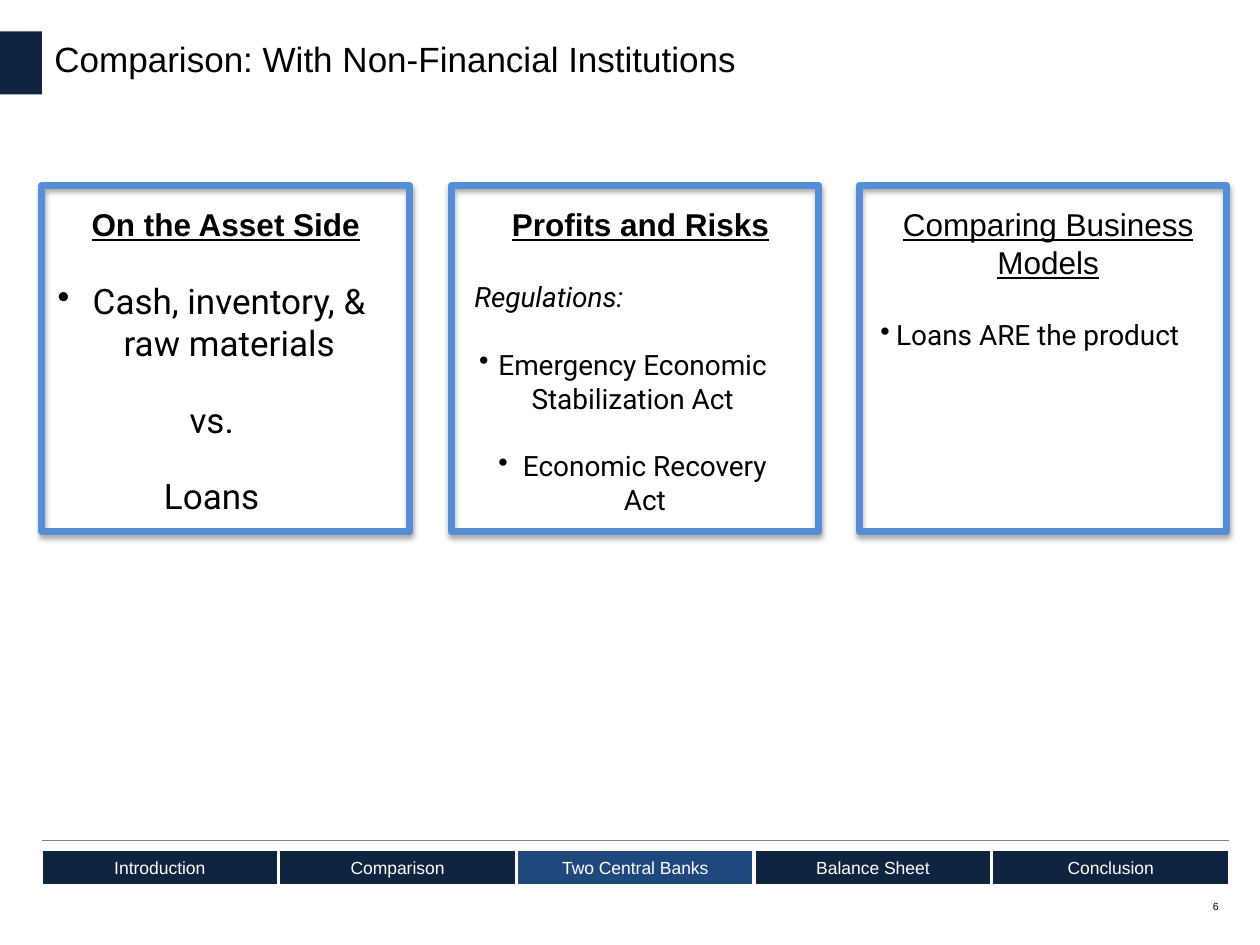
from dataclasses import dataclass

from lxml import etree
from pptx import Presentation
from pptx.dml.color import RGBColor
from pptx.enum.shapes import MSO_CONNECTOR, MSO_SHAPE
from pptx.enum.text import MSO_ANCHOR, PP_ALIGN
from pptx.oxml.ns import qn
from pptx.util import Pt

RECTANGLE = MSO_SHAPE.RECTANGLE
STRAIGHT = MSO_CONNECTOR.STRAIGHT
LEFT, CENTER = PP_ALIGN.LEFT, PP_ALIGN.CENTER
MIDDLE = MSO_ANCHOR.MIDDLE

COLORS = {
    "navy": "0F243E",
    "active": "1F497D",
    "frame": "558ED5",
    "rule": "808080",
    "black": "000000",
    "white": "FFFFFF",
}
MARGIN = 24
CONTENT_RIGHT = 702


@dataclass
class Line:
    text: str
    size: float
    font: str = "Roboto"
    align: PP_ALIGN = LEFT
    before: float = 0
    hang: float = 0  # bullet indent, 0 for no bullet
    right: float = 0
    bold: bool = False
    italic: bool = False
    underline: bool = False
    color: str = "black"


@dataclass
class Panel:
    frame_left: float
    text_left: float
    text_width: float
    lines: list[Line]


def rgb(name: str) -> RGBColor:
    return RGBColor.from_string(COLORS[name])


def write(frame, lines: list[Line]) -> None:
    frame.word_wrap = True
    for i, line in enumerate(lines):
        paragraph = frame.paragraphs[0] if i == 0 else frame.add_paragraph()
        paragraph.text = line.text
        paragraph.alignment = line.align
        paragraph.space_before = Pt(line.before)
        font = paragraph.font
        font.name, font.size = line.font, Pt(line.size)
        font.bold, font.italic, font.underline = line.bold, line.italic, line.underline
        font.color.rgb = rgb(line.color)
        if line.hang:
            add_bullet(paragraph, line)


def add_bullet(paragraph, line: Line) -> None:
    props = paragraph._p.get_or_add_pPr()
    props.set("marL", str(Pt(line.hang)))
    props.set("indent", str(-Pt(line.hang)))
    props.set("marR", str(Pt(line.right)))
    bullet = etree.Element(qn("a:buChar"), char="•")
    props.find(qn("a:defRPr")).addprevious(bullet)


def add_text(slide, left: float, top: float, width: float, height: float,
             lines: list[Line]) -> None:
    box = slide.shapes.add_textbox(Pt(left), Pt(top), Pt(width), Pt(height))
    write(box.text_frame, lines)


def add_block(slide, left: float, top: float, width: float, height: float,
              fill: str | None = None, line: str | None = None, weight: float = 0):
    block = slide.shapes.add_shape(RECTANGLE, Pt(left), Pt(top), Pt(width), Pt(height))
    block.shadow.inherit = False
    if fill:
        block.fill.solid()
        block.fill.fore_color.rgb = rgb(fill)
    else:
        block.fill.background()
    if line:
        block.line.color.rgb = rgb(line)
        block.line.width = Pt(weight)
    else:
        block.line.fill.background()
    return block


def add_frame(slide, left: float) -> None:
    frame = add_block(slide, left, 106, 210, 198, line="frame", weight=4)
    etree.SubElement(frame.line._get_or_add_ln(), qn("a:round"))
    effects = frame._element.spPr.find(qn("a:effectLst"))
    shadow = etree.SubElement(effects, qn("a:outerShdw"), blurRad=str(Pt(3.1)),
                              dist=str(Pt(1.8)), dir="5400000", rotWithShape="0")
    shade = etree.SubElement(shadow, qn("a:srgbClr"), val=COLORS["black"])
    etree.SubElement(shade, qn("a:alpha"), val="35000")


def heading(text: str, bold: bool = True) -> Line:
    return Line(text, 18, "Arial", CENTER, bold=bold, underline=True)


PANELS = [
    Panel(24, 24, 210, [
        heading("On the Asset Side"),
        Line("Cash, inventory, & raw materials", 20, align=CENTER, before=21,
             hang=20, right=16),
        Line("vs.", 20, align=CENTER, before=19.5),
        Line("Loans", 20, align=CENTER, before=19.5),
    ]),
    Panel(258, 264, 204, [
        heading("Profits and Risks"),
        Line("Regulations:", 16, before=21, italic=True),
        Line("Emergency Economic Stabilization Act", 16, align=CENTER, before=19.5,
             hang=11, right=20),
        Line("Economic Recovery Act", 16, align=CENTER, before=19.5, hang=14, right=9),
    ]),
    Panel(491, 496, 206, [
        heading("Comparing Business Models", bold=False),
        Line("Loans ARE the product", 16, before=21, hang=9),
    ]),
]
SECTIONS = ["Introduction", "Comparison", "Two Central Banks", "Balance Sheet", "Conclusion"]
ACTIVE_SECTION = "Two Central Banks"


def main() -> None:
    prs = Presentation()
    prs.slide_width, prs.slide_height = Pt(720), Pt(540)
    slide = prs.slides.add_slide(prs.slide_layouts[6])

    # Title with its marker
    add_block(slide, 0, 18, MARGIN, 36, fill="navy")
    add_text(slide, MARGIN, 18, 678, 32,
             [Line("Comparison: With Non-Financial Institutions", 20, "Arial")])

    # Footer rule and page number
    rule = slide.shapes.add_connector(STRAIGHT, Pt(MARGIN), Pt(480),
                                      Pt(CONTENT_RIGHT), Pt(480))
    rule.line.color.rgb = rgb("rule")
    rule.line.width = Pt(0.25)
    etree.SubElement(rule._element.spPr, qn("a:effectLst"))
    add_text(slide, 686, 511, 24, 14, [Line("6", 6, "Arial")])

    # Three framed panels
    for panel in PANELS:
        add_text(slide, panel.text_left, 113.8, panel.text_width, 186, panel.lines)
    for panel in PANELS:
        add_frame(slide, panel.frame_left)

    # Section navigation
    gap = 1.2
    tab_width = (CONTENT_RIGHT - MARGIN - gap * (len(SECTIONS) - 1)) / len(SECTIONS)
    for i, section in enumerate(SECTIONS):
        fill = "active" if section == ACTIVE_SECTION else "navy"
        tab = add_block(slide, MARGIN + i * (tab_width + gap), 486, tab_width, 19.4,
                        fill, "white", 0.75)
        tab.text_frame.vertical_anchor = MIDDLE
        write(tab.text_frame, [Line(section, 10, "Arial", CENTER, color="white")])

    prs.save("out.pptx")


if __name__ == "__main__":
    main()
